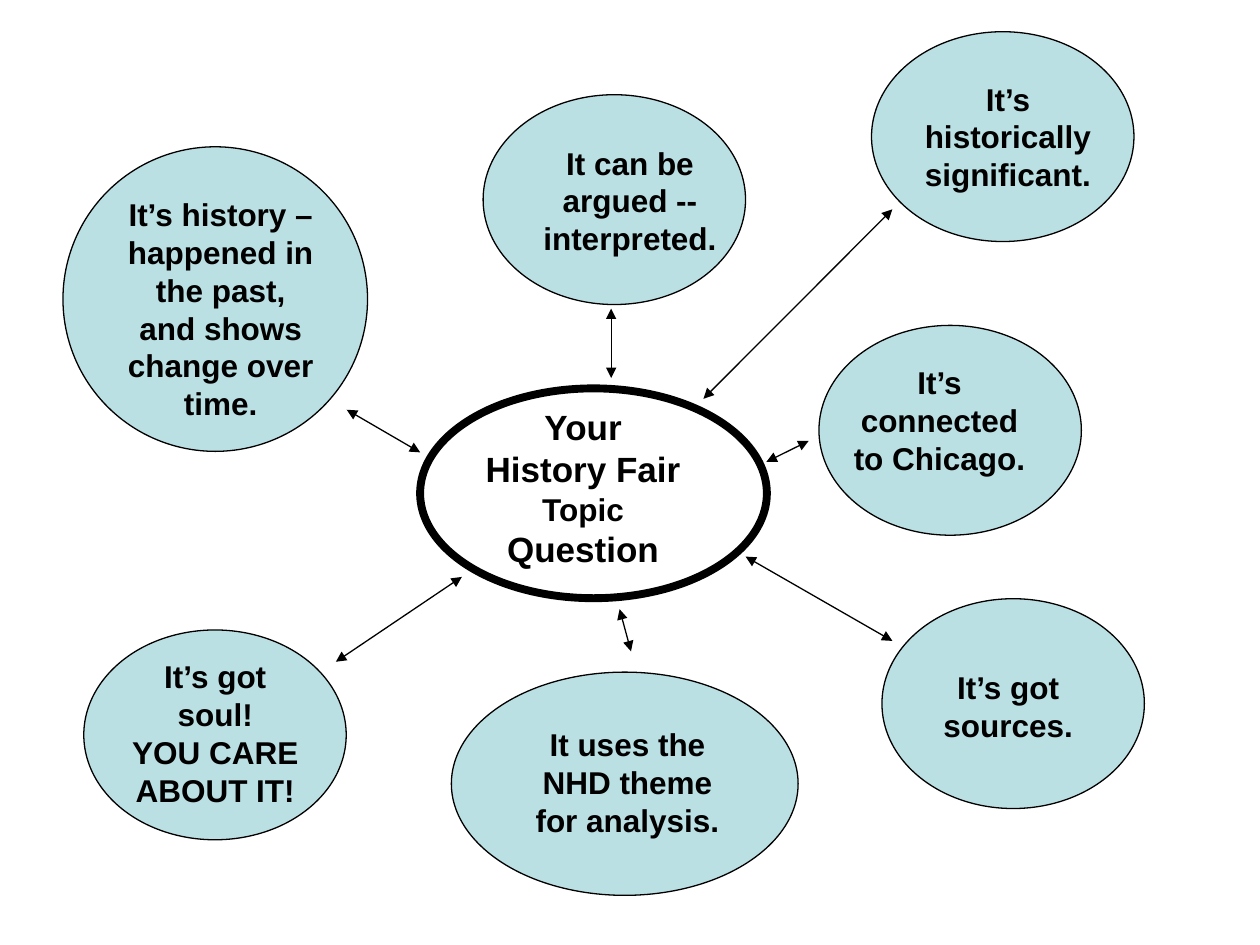
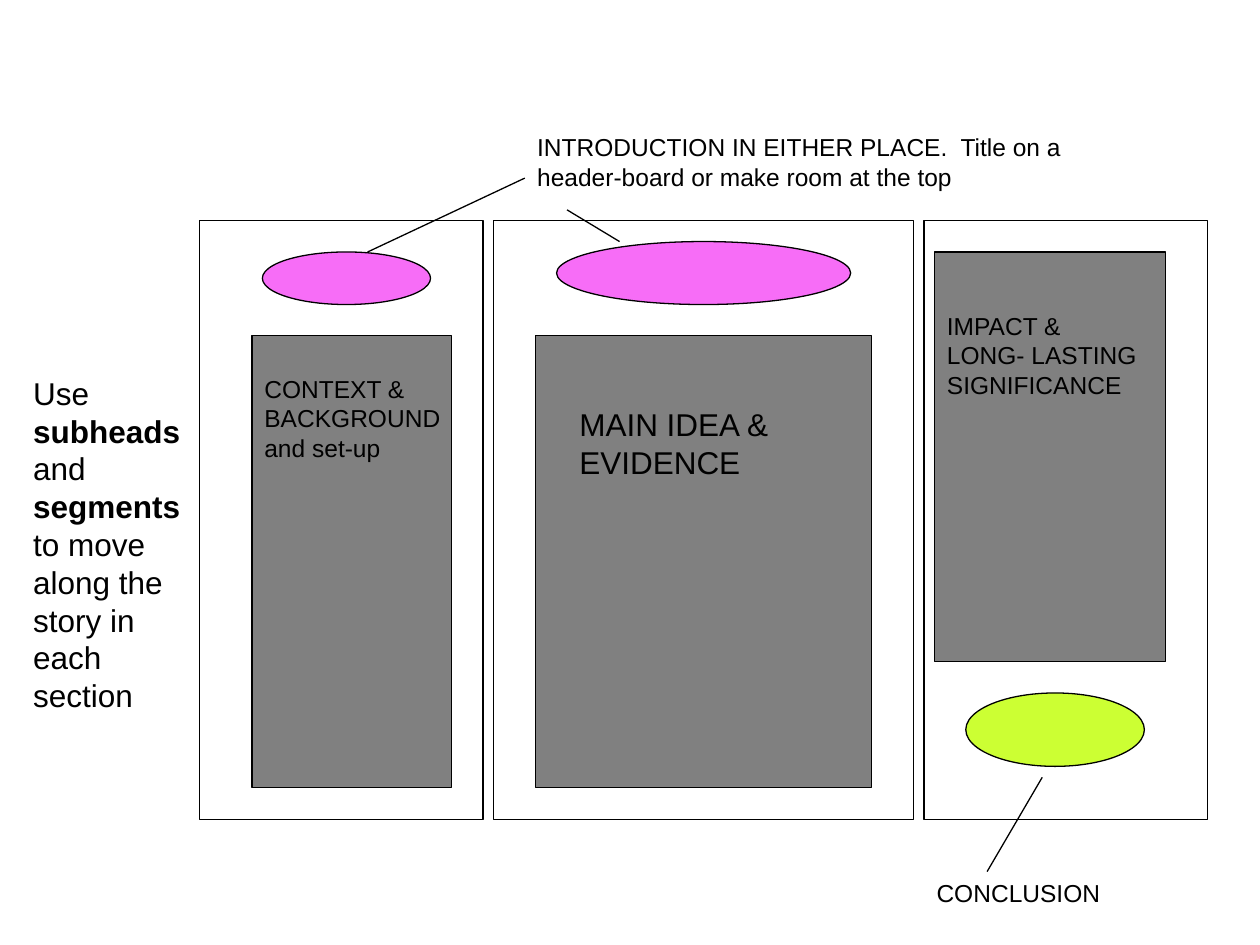
"""Build two slides: a topic question mind map and an exhibit board layout."""
from dataclasses import dataclass

from lxml import etree
from pptx import Presentation
from pptx.dml.color import RGBColor
from pptx.enum.shapes import MSO_CONNECTOR, MSO_SHAPE
from pptx.enum.text import PP_ALIGN
from pptx.oxml.ns import qn
from pptx.util import Cm, Pt

ELLIPSE = MSO_SHAPE.OVAL
RECTANGLE = MSO_SHAPE.RECTANGLE
STRAIGHT = MSO_CONNECTOR.STRAIGHT
CENTER = PP_ALIGN.CENTER
LEFT = PP_ALIGN.LEFT
BLANK_LAYOUT = 6


@dataclass(frozen=True)
class Theme:
    font: str = "Arial"
    ink: str = "000000"
    paper: str = "FFFFFF"
    bubble: str = "BBE0E3"
    panel: str = "808080"
    introduction: str = "F76DF7"
    conclusion: str = "CCFF33"
    large: int = 20
    body: int = 18
    small: int = 14
    thin: float = 0.75
    thick: float = 4.5


class SlideBuilder:
    def __init__(self, presentation, theme):
        self.presentation = presentation
        self.theme = theme
        self.slide = None

    def new_slide(self):
        layout = self.presentation.slide_layouts[BLANK_LAYOUT]
        self.slide = self.presentation.slides.add_slide(layout)

    def shape(self, kind, box, fill=None, weight=None):
        shape = self.slide.shapes.add_shape(kind, *map(Cm, box))
        shape.shadow.inherit = False
        if fill:
            shape.fill.solid()
            shape.fill.fore_color.rgb = RGBColor.from_string(fill)
        else:
            shape.fill.background()
        shape.line.color.rgb = RGBColor.from_string(self.theme.ink)
        shape.line.width = Pt(weight or self.theme.thin)

    def text(self, box, runs, size=None, bold=False, align=LEFT):
        frame = self.slide.shapes.add_textbox(*map(Cm, box)).text_frame
        frame.word_wrap = True
        paragraph = frame.paragraphs[0]
        paragraph.alignment = align
        paragraph.font.name = self.theme.font
        paragraph.font.size = Pt(size or self.theme.body)
        paragraph.font.bold = bold
        paragraph.font.color.rgb = RGBColor.from_string(self.theme.ink)
        if isinstance(runs, str):
            paragraph.text = runs
            return
        for words, changes in runs:
            run = paragraph.add_run()
            run.text = words
            for name, value in changes.items():
                setattr(run.font, name, value)

    def line(self, start, end, arrows=False):
        connector = self.slide.shapes.add_connector(STRAIGHT, *map(Cm, start + end))
        connector.line.color.rgb = RGBColor.from_string(self.theme.ink)
        connector.line.width = Pt(self.theme.thin)
        if arrows:
            outline = connector.line._get_or_add_ln()
            for tag in ("a:headEnd", "a:tailEnd"):
                etree.SubElement(outline, qn(tag), type="triangle")
        etree.SubElement(connector._element.spPr, qn("a:effectLst"))


def build_topic_map(builder):
    theme = builder.theme
    builder.new_slide()
    builder.shape(ELLIPSE, (8.47, 7.83, 6.99, 4.23), weight=theme.thick)
    large = {"size": Pt(theme.large)}
    question = [("Your History Fair", large), (" Topic ", {}), ("Question", large)]
    builder.text((9.53, 8.05, 4.45, 3.56), question, bold=True, align=CENTER)

    usual = (5.29, 4.23)
    criteria = [
        ("It’s got sources.", (17.78, 12.07), usual, (18.63, 13.34, 3.39, 1.78),
         (15.03, 11.22), (17.99, 12.92)),
        ("It’s historically significant.", (17.57, 0.64), usual, (18.2, 1.48, 4.24, 2.54),
         (14.18, 8.04), (17.99, 4.22)),
        ("It’s got soul!\vYOU CARE ABOUT IT!", (1.69, 12.7), usual, (2.33, 13.13, 4.02, 3.3),
         (6.77, 13.34), (9.31, 11.63)),
        ("It’s history – happened in the past, and shows change over time.",
         (1.27, 2.96), (6.14, 6.14), (2.33, 3.81, 4.24, 4.83),
         (6.99, 8.26), (8.47, 9.12)),
        ("It can be argued -- interpreted.", (9.74, 1.91), usual, (10.69, 2.77, 4.02, 2.54),
         (12.32, 6.22), (12.32, 7.62)),
        ("It’s connected to Chicago.", (16.51, 6.56), usual, (16.93, 7.2, 4.02, 2.54),
         (15.45, 9.31), (16.3, 8.89)),
        ("It uses the NHD theme for analysis.", (9.1, 13.55), (6.99, 4.5),
         (10.27, 14.5, 4.76, 2.57), (12.49, 12.28), (12.72, 13.13)),
    ]
    for words, corner, size, text_box, start, end in criteria:
        builder.shape(ELLIPSE, corner + size, theme.bubble)
        builder.text(text_box, words, bold=True, align=CENTER)
        builder.line(start, end, arrows=True)


def build_board_layout(builder):
    theme = builder.theme
    builder.new_slide()
    board_left, board_gap = 4.02, 0.21
    for width in (5.72, 8.47, 5.72):
        builder.shape(RECTANGLE, (board_left, 4.45, width, 12.07), theme.paper)
        board_left += width + board_gap

    sections = [
        ("CONTEXT & BACKGROUND and set-up", theme.small,
         (5.08, 6.77, 4.02, 9.1), (5.08, 7.41, 4.24, 2.03)),
        ("MAIN IDEA & EVIDENCE", theme.body,
         (10.8, 6.77, 6.77, 9.1), (11.43, 8.05, 5.29, 1.78)),
        ("IMPACT & LONG- LASTING SIGNIFICANCE", theme.small,
         (18.84, 5.08, 4.66, 8.26), (18.84, 6.14, 4.45, 2.03)),
    ]
    for words, size, panel_box, text_box in sections:
        builder.shape(RECTANGLE, panel_box, theme.panel)
        builder.text(text_box, words, size)

    markers = [
        ((5.29, 5.08, 3.39, 1.06), theme.introduction, (7.41, 5.08), (10.58, 3.59)),
        ((11.22, 4.87, 5.93, 1.27), theme.introduction, (11.43, 4.23), (12.49, 4.87)),
        ((19.47, 13.97, 3.6, 1.48), theme.conclusion, (21.01, 15.67), (19.9, 17.57)),
    ]
    for box, fill, start, end in markers:
        builder.shape(ELLIPSE, box, fill)
        builder.line(start, end)

    introduction = ("INTRODUCTION IN EITHER PLACE.  Title on a header-board "
                    "or make room at the top")
    builder.text((10.58, 2.54, 12.5, 1.45), introduction, theme.small)
    builder.text((18.63, 17.57, 5.72, 0.86), "CONCLUSION", theme.small)
    strong = {"bold": True}
    advice = [("Use ", {}), ("subheads", strong), (" and ", {}), ("segments ", strong),
              ("to move along the story in each section", {})]
    builder.text((0.42, 7.41, 3.6, 7.19), advice)


def main():
    presentation = Presentation()
    presentation.slide_width = Cm(25.4)
    presentation.slide_height = Cm(19.05)
    builder = SlideBuilder(presentation, Theme())
    build_topic_map(builder)
    build_board_layout(builder)
    presentation.save("out.pptx")


if __name__ == "__main__":
    main()
